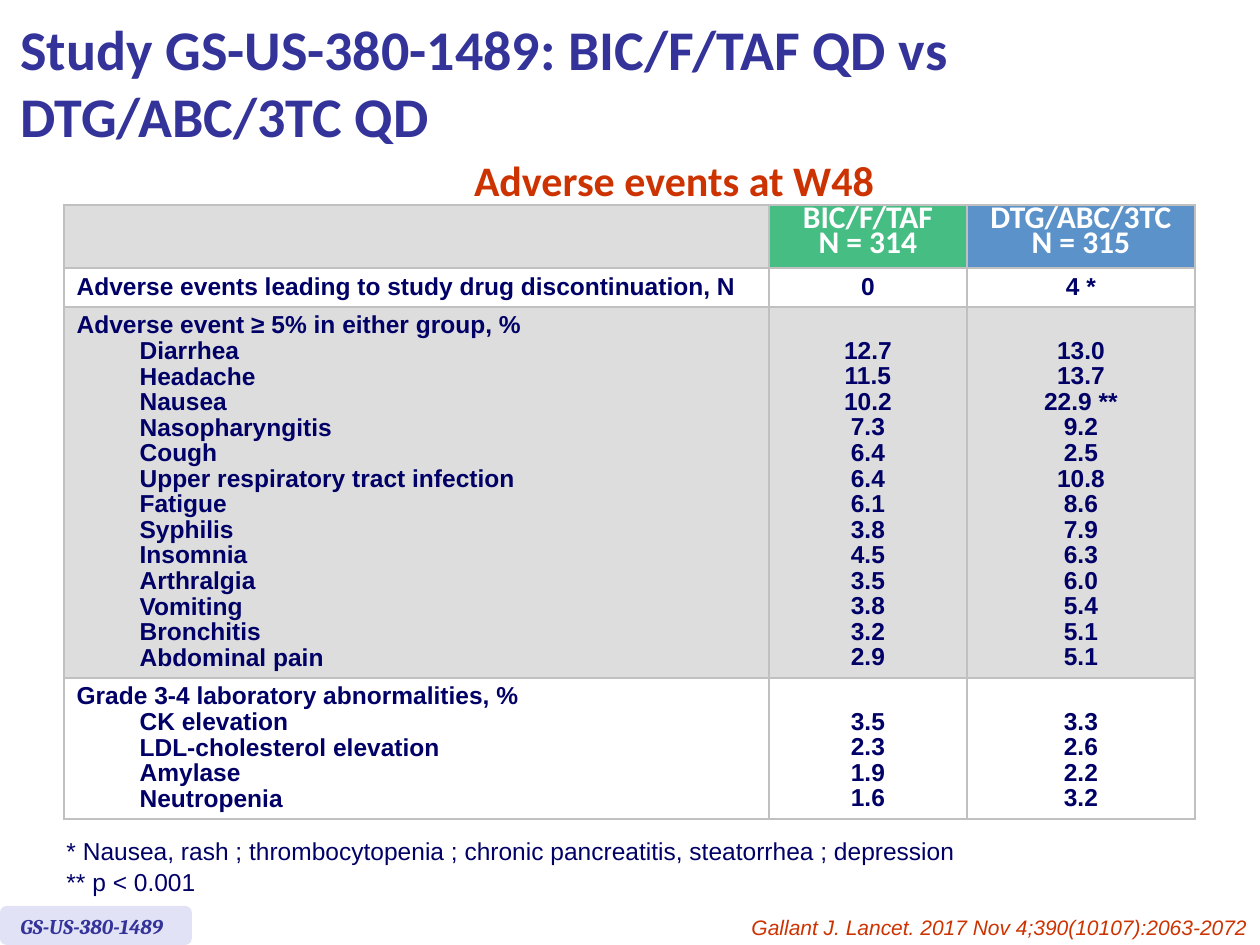
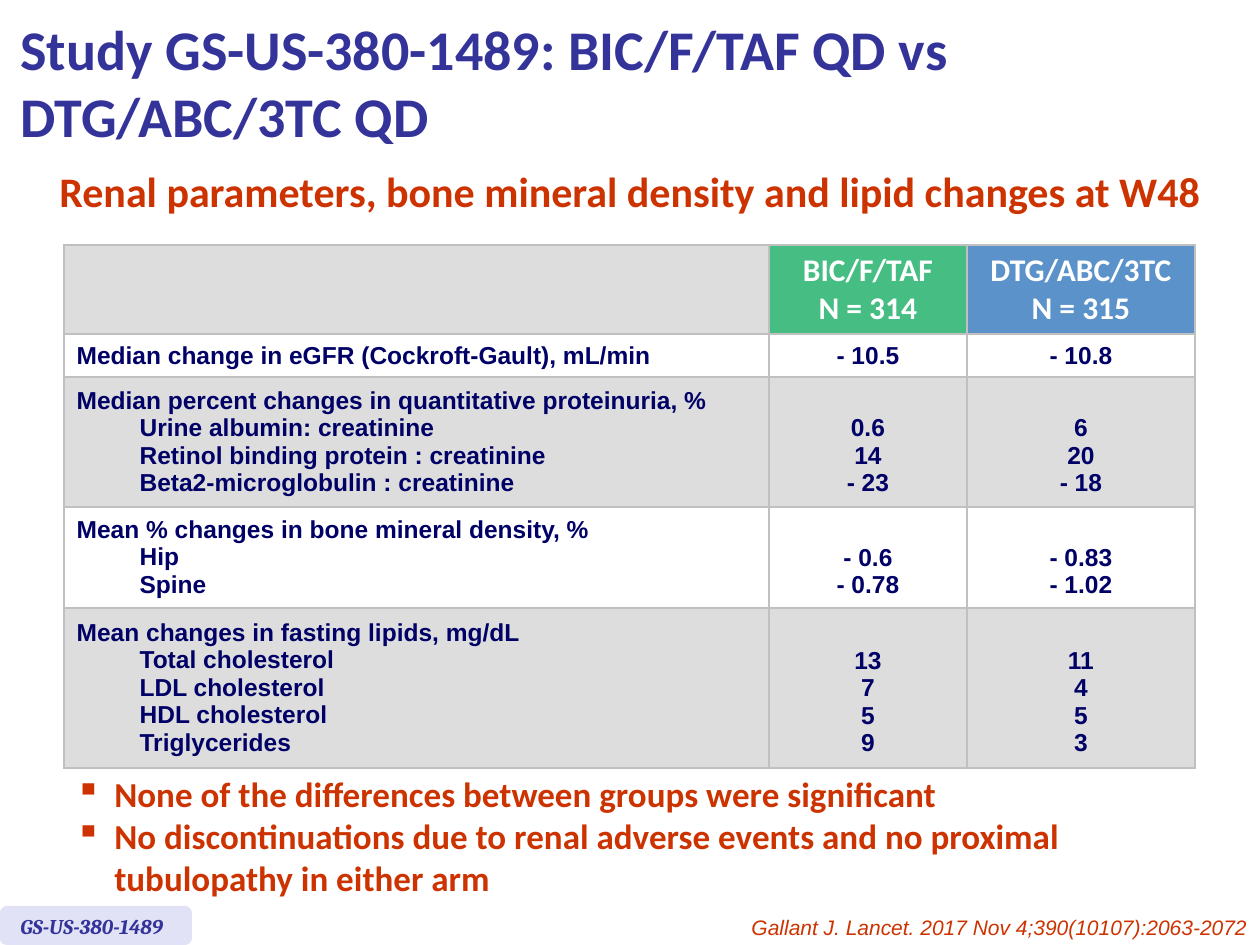
from lxml import etree
from pptx import Presentation
from pptx.dml.color import RGBColor
from pptx.enum.shapes import MSO_SHAPE
from pptx.enum.text import MSO_ANCHOR, PP_ALIGN
from pptx.oxml.ns import qn
from pptx.util import Emu, Pt

ROUNDED = MSO_SHAPE.ROUNDED_RECTANGLE
TOP, MIDDLE = MSO_ANCHOR.TOP, MSO_ANCHOR.MIDDLE
LEFT, CENTER, RIGHT = PP_ALIGN.LEFT, PP_ALIGN.CENTER, PP_ALIGN.RIGHT

# Shared colours and text formats
INDIGO, RUST, NAVY, WHITE = "333399", "CC3300", "000066", "FFFFFF"
GREY, BORDER, LAVENDER = "DDDDDD", "C0C0C0", "E2E2F6"
TITLE = {"name": "Calibri", "size": Pt(32), "bold": True, "color": INDIGO}
SUBTITLE = {"name": "Calibri", "size": Pt(24), "bold": True, "color": RUST}
BULLET = {"name": "Calibri", "size": Pt(20), "bold": True, "color": RUST}
HEADER = {"name": "Calibri", "size": Pt(18), "bold": True, "color": WHITE}
CELL = {"name": "Arial", "size": Pt(14), "bold": True, "color": NAVY}
NOTE = {"name": "Arial", "size": Pt(14), "color": NAVY}
BADGE = {"name": "Cambria", "size": Pt(12), "bold": True, "italic": True,
         "color": INDIGO}
CITATION = {"name": "Arial", "size": Pt(12), "italic": True, "color": RUST}

# Table layout shared by both slides
TABLE_LEFT = 64
COLUMN_WIDTHS = [705, 198, 228]
CELL_MARGIN = 6
INDENT = 63
BULLET_INDENT = 39
ARMS = [("BIC/F/TAF", "N = 314", "45BD83"), ("DTG/ABC/3TC", "N = 315", "5B92C9")]

# Each section: heading with its values, then the indented items
ADVERSE_EVENTS = [
    (("Adverse events leading to study drug discontinuation, N", "0", "4 *"), []),
    (("Adverse event ≥ 5% in either group, %",), [
        ("Diarrhea", "12.7", "13.0"),
        ("Headache", "11.5", "13.7"),
        ("Nausea", "10.2", "22.9 **"),
        ("Nasopharyngitis", "7.3", "9.2"),
        ("Cough", "6.4", "2.5"),
        ("Upper respiratory tract infection", "6.4", "10.8"),
        ("Fatigue", "6.1", "8.6"),
        ("Syphilis", "3.8", "7.9"),
        ("Insomnia", "4.5", "6.3"),
        ("Arthralgia", "3.5", "6.0"),
        ("Vomiting", "3.8", "5.4"),
        ("Bronchitis", "3.2", "5.1"),
        ("Abdominal pain", "2.9", "5.1"),
    ]),
    (("Grade 3-4 laboratory abnormalities, %",), [
        ("CK elevation", "3.5", "3.3"),
        ("LDL-cholesterol elevation", "2.3", "2.6"),
        ("Amylase", "1.9", "2.2"),
        ("Neutropenia", "1.6", "3.2"),
    ]),
]
PARAMETER_CHANGES = [
    (("Median change in eGFR (Cockroft-Gault), mL/min", "- 10.5", "- 10.8"), []),
    (("Median percent changes in quantitative proteinuria, %",), [
        ("Urine albumin: creatinine", "0.6", "6"),
        ("Retinol binding protein : creatinine", "14", "20"),
        ("Beta2-microglobulin : creatinine", "- 23", "- 18"),
    ]),
    (("Mean % changes in bone mineral density, %",), [
        ("Hip", "- 0.6", "- 0.83"),
        ("Spine", "- 0.78", "- 1.02"),
    ]),
    (("Mean changes in fasting lipids, mg/dL",), [
        ("Total cholesterol", "13", "11"),
        ("LDL cholesterol", "7", "4"),
        ("HDL cholesterol", "5", "5"),
        ("Triglycerides", "9", "3"),
    ]),
]


def px(length):
    return Emu(round(length * 914400 / 126))


def rgb(color):
    return RGBColor.from_string(color)


def write(frame, lines, style, align=LEFT, spacing=None, gap=None):
    """Fill a text frame with one paragraph per line."""
    frame.word_wrap = True
    for index, line in enumerate(lines):
        para = frame.add_paragraph() if index else frame.paragraphs[0]
        para.alignment = align
        if spacing:
            para.line_spacing = spacing
        if gap and index:
            para.space_before = gap
        span = para.add_run()
        span.text = line
        for key, value in style.items():
            if key == "color":
                span.font.color.rgb = rgb(value)
            else:
                setattr(span.font, key, value)


def add_text(page, place, lines, style, anchor=TOP, **layout):
    box = page.shapes.add_textbox(*map(px, place))
    box.text_frame.vertical_anchor = anchor
    write(box.text_frame, lines, style, **layout)
    return box


def add_bullets(page, place, lines):
    box = add_text(page, place, lines, BULLET)
    for para in box.text_frame.paragraphs:
        properties = para._p.get_or_add_pPr()
        properties.set("marL", str(px(BULLET_INDENT)))
        properties.set("indent", str(-px(BULLET_INDENT)))
        color = etree.SubElement(properties, qn("a:buClr"))
        etree.SubElement(color, qn("a:srgbClr"), val=RUST)
        etree.SubElement(properties, qn("a:buChar"), char="▪")


def format_cell(cell, fill):
    """Grey border on all sides, plain fill, centred vertically."""
    properties = cell._tc.get_or_add_tcPr()
    for side in ("a:lnL", "a:lnR", "a:lnT", "a:lnB"):
        line = etree.SubElement(properties, qn(side), w=str(Pt(1)))
        solid = etree.SubElement(line, qn("a:solidFill"))
        etree.SubElement(solid, qn("a:srgbClr"), val=BORDER)
    cell.fill.solid()
    cell.fill.fore_color.rgb = rgb(fill)
    cell.vertical_anchor = MIDDLE
    cell.margin_top = cell.margin_bottom = px(CELL_MARGIN)


def fill_section(cells, heading, items, line_height, spacing):
    label, *values = heading
    frame = cells[0].text_frame
    write(frame, [label] + [item[0] for item in items], CELL, spacing=spacing)
    for para in frame.paragraphs[1:]:
        para.level = 1
        properties = para._p.get_or_add_pPr()
        properties.set("marL", str(px(INDENT)))
        properties.set("indent", "0")
    for column, cell in enumerate(cells[1:], start=1):
        lines = [item[column] for item in items] or [values[column - 1]]
        write(cell.text_frame, lines, CELL, CENTER, spacing)
        if items:  # values start one line below the heading
            cell.margin_top = px(CELL_MARGIN + line_height)


def add_results_table(page, top, heights, sections, line_height, spacing=None):
    frame = page.shapes.add_table(
        len(heights), len(COLUMN_WIDTHS), px(TABLE_LEFT), px(top),
        px(sum(COLUMN_WIDTHS)), px(sum(heights)))
    table = frame.table
    table.first_row = table.horz_banding = False
    for column, width in zip(table.columns, COLUMN_WIDTHS):
        column.width = px(width)
    for row, height in zip(table.rows, heights):
        row.height = px(height)

    # Header row
    format_cell(table.cell(0, 0), GREY)
    for column, (arm, size, color) in enumerate(ARMS, start=1):
        cell = table.cell(0, column)
        format_cell(cell, color)
        write(cell.text_frame, [arm, size], HEADER, CENTER, spacing)

    # Section rows, white and grey in turn
    for number, (heading, items) in enumerate(sections, start=1):
        cells = list(table.rows[number].cells)
        for cell in cells:
            format_cell(cell, WHITE if number % 2 else GREY)
        fill_section(cells, heading, items, line_height, spacing)


def add_page(deck, subtitle, subtitle_place):
    """New page with title, subtitle, study badge and citation."""
    page = deck.slides.add_slide(deck.slide_layouts[6])
    add_text(page, (8, 6, 1068, 152),
             ["Study GS-US-380-1489: BIC/F/TAF QD vs DTG/ABC/3TC QD"],
             TITLE, anchor=MIDDLE)
    add_text(page, subtitle_place, [subtitle], SUBTITLE,
             align=CENTER, spacing=Pt(22.8))
    badge = page.shapes.add_shape(ROUNDED, *map(px, (0, 906, 192, 39)))
    badge.adjustments[0] = 0.17
    badge.shadow.inherit = False
    badge.fill.solid()
    badge.fill.fore_color.rgb = rgb(LAVENDER)
    badge.line.fill.background()
    add_text(page, (8, 907, 178, 38), ["GS-US-380-1489"], BADGE)
    add_text(page, (333, 908, 927, 37),
             ["Gallant J. Lancet. 2017 Nov 4;390(10107):2063-2072"],
             CITATION, align=RIGHT)
    return page


def main():
    deck = Presentation()
    deck.slide_width, deck.slide_height = px(1260), px(945)

    # Adverse events
    page = add_page(deck, "Adverse events at W48", (451, 159, 446, 64))
    add_results_table(page, 205, [63, 39, 371, 141], ADVERSE_EVENTS,
                      line_height=25, spacing=Pt(14.6))
    add_text(page, (54, 830, 940, 72),
             ["* Nausea, rash ; thrombocytopenia ; chronic pancreatitis, "
              "steatorrhea ; depression", "** p < 0.001"], NOTE, gap=Pt(1))

    # Renal, bone and lipid changes
    page = add_page(
        deck, "Renal parameters, bone mineral density and lipid changes at W48",
        (15, 170, 1230, 64))
    add_results_table(page, 245, [89, 43, 130, 101, 160], PARAMETER_CHANGES,
                      line_height=28)
    add_bullets(page, (63, 766, 1133, 140), [
        "None of the differences between groups were significant",
        "No discontinuations due to renal adverse events and no proximal "
        "tubulopathy in either arm"])

    deck.save("out.pptx")


if __name__ == "__main__":
    main()
